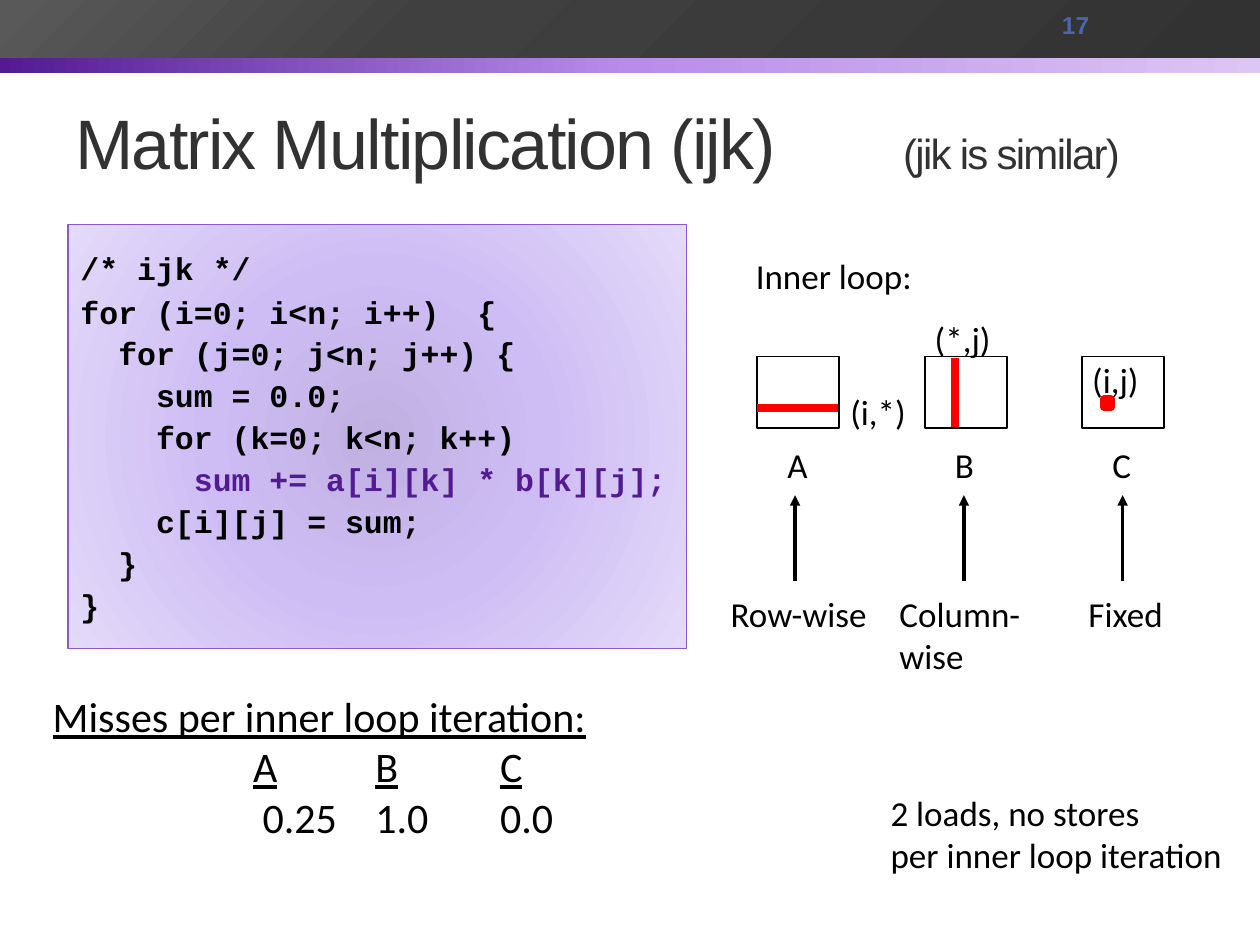
import pptx
import pptx.util
import pptx.dml.color
import pptx.enum.shapes
import pptx.enum.text
import pptx.oxml.ns
import lxml.etree

Inches, Pt = pptx.util.Inches, pptx.util.Pt
COLORS = {"black": "000000", "white": "FFFFFF", "red": "FF0000", "title": "323232",
          "purple": "521B92", "outline": "8B58D2", "number": "4A66AC"}
BANNERS = [
    ((0, 0.24, 10, 0.34), [(0, "521B92"), (50, "B88DEA"), (100, "DCC6F4")], 0),
    ((0, 0, 10, 0.46), [(0, "323232"), (66, "404040"), (99, "595959")], 225),
]
CODE_GRADIENT = [(0, "C0B0E2"), (45, "CEBDF4"), (100, "E4DAF9")]
CODE = [
    "/* ijk */",
    "for (i=0; i<n; i++)  {",
    "  for (j=0; j<n; j++) {",
    "    sum = 0.0;",
    "    for (k=0; k<n; k++)",
    "      sum += a[i][k] * b[k][j];",
    "    c[i][j] = sum;",
    "  }",
    "}",
]
HIGHLIGHT = "sum += a[i][k] * b[k][j];"
MATRICES = [
    {"name": "A", "left": 6.01, "arrow": 6.31, "access": ["Row-wise"], "access_at": (5.7, 1.29)},
    {"name": "B", "left": 7.34, "arrow": 7.65, "access": ["Column-", "wise"], "access_at": (7.04, 1.17)},
    {"name": "C", "left": 8.59, "arrow": 8.91, "access": ["Fixed"], "access_at": (8.54, 0.79)},
]
LABELS = [
    (["(i,*)"], (6.65, 3.05, 0.64, 0.43)),
    (["(*,j)"], (7.32, 2.47, 0.65, 0.43)),
    (["(i,j)"], (8.57, 2.8, 0.57, 0.43)),
    (["Inner loop:"], (5.9, 1.97, 1.45, 0.43)),
    (["2 loads, no stores", "per inner loop iteration"], (6.97, 6.23, 2.86, 0.77)),
]
MISSES = [
    (["Misses per inner loop iteration:"], True),
    (["", "A", "B", "C"], True),
    (["", " 0.25", "1.0", "0.0"], False),
]
MISS_TABS = [1.59, 2.56, 3.55]

deck = pptx.Presentation()
deck.slide_width, deck.slide_height = Inches(10), Inches(7.5)
page = deck.slides.add_slide(deck.slide_layouts[6])


def rgb(color):
    return pptx.dml.color.RGBColor.from_string(color)


def child(parent, tag, **attributes):
    element = lxml.etree.SubElement(parent, pptx.oxml.ns.qn(tag))
    for name, value in attributes.items():
        element.set(name, str(value))
    return element


def add_span(para, text, size, font="Calibri", color=COLORS["black"], bold=False):
    span = para.add_run()
    span.text = text
    span.font.size, span.font.name, span.font.bold = Pt(size), font, bold
    span.font.color.rgb = rgb(color)
    return span


def add_paras(frame, count):
    return [frame.paragraphs[0]] + [frame.add_paragraph() for _ in range(count - 1)]


def add_tabs(para, stops):
    tab_list = child(para._p.get_or_add_pPr(), "a:tabLst")
    for stop in stops:
        child(tab_list, "a:tab", pos=int(Inches(stop)), algn="l")


def add_box(at, wrap=True, anchor="TOP"):
    box = page.shapes.add_textbox(*map(Inches, at))
    box.text_frame.word_wrap = wrap
    box.text_frame.vertical_anchor = getattr(pptx.enum.text.MSO_ANCHOR, anchor)
    return box.text_frame


def add_label(lines, at):
    frame = add_box(at, wrap=False)
    frame.auto_size = pptx.enum.text.MSO_AUTO_SIZE.SHAPE_TO_FIT_TEXT
    for para, line in zip(add_paras(frame, len(lines)), lines):
        add_span(para, line, 20)


def add_rect(at, fill=None, line=None, width=1):
    rect = page.shapes.add_shape(pptx.enum.shapes.MSO_SHAPE.RECTANGLE, *map(Inches, at))
    rect.shadow.inherit = False
    if fill:
        rect.fill.solid()
        rect.fill.fore_color.rgb = rgb(fill)
    if line:
        rect.line.color.rgb, rect.line.width = rgb(line), Pt(width)
    else:
        rect.line.fill.background()
    return rect


def set_gradient(rect, stops, angle=None):
    gradient = lxml.etree.Element(pptx.oxml.ns.qn("a:gradFill"))
    stop_list = child(gradient, "a:gsLst")
    for position, color in stops:
        child(child(stop_list, "a:gs", pos=position * 1000), "a:srgbClr", val=color)
    if angle is None:
        center = dict.fromkeys("ltrb", 50000)
        child(child(gradient, "a:path", path="circle"), "a:fillToRect", **center)
    else:
        child(gradient, "a:lin", ang=angle * 60000, scaled=0)
    rect._element.spPr.find(pptx.oxml.ns.qn("a:prstGeom")).addnext(gradient)


def add_line(start, end, color, width, arrow=False):
    line = page.shapes.add_connector(pptx.enum.shapes.MSO_CONNECTOR.STRAIGHT,
                                     *map(Inches, start + end))
    line.line.color.rgb, line.line.width = rgb(color), Pt(width)
    if arrow:
        child(line.line._get_or_add_ln(), "a:tailEnd", type="triangle")
    child(line._element.spPr, "a:effectLst")


for at, stops, angle in BANNERS:
    set_gradient(add_rect(at), stops, angle)

title = add_box((0.5, 0.58, 9, 1.08), anchor="MIDDLE").paragraphs[0]
add_tabs(title, [6.57])
for text, size in [("Matrix Multiplication (ijk)\t", 40), ("(jik is similar)", 24)]:
    span = add_span(title, text, size, "Arial", COLORS["title"])
    span.font._element.set("spc", "-100")

number = add_box((8.33, 0.02, 1.17, 0.36), anchor="MIDDLE").paragraphs[0]
add_span(number, "17", 14, "Arial", COLORS["number"], True)

for matrix in MATRICES:
    left, arrow = matrix["left"], matrix["arrow"]
    add_rect((left, 2.83, 0.65, 0.57), COLORS["white"], COLORS["black"])
    add_label([matrix["name"]], (left + 0.14, 3.47, 0.36, 0.43))
    add_line((arrow, 4.61), (arrow, 3.93), COLORS["black"], 2, arrow=True)
    access_left, access_width = matrix["access_at"]
    access_height = 0.09 + 0.34 * len(matrix["access"])
    add_label(matrix["access"], (access_left, 4.65, access_width, access_height))

add_line((6.01, 3.24), (6.65, 3.24), COLORS["red"], 4.5)
add_line((7.58, 2.84), (7.58, 3.39), COLORS["red"], 4.5)
add_rect((8.76, 3.17, 0.06, 0.06), COLORS["red"], COLORS["red"], 4.5)
for lines, at in LABELS:
    add_label(lines, at)

misses = add_box((0.32, 5.43, 5.55, 1.33))
for para, (cells, underlined) in zip(add_paras(misses, len(MISSES)), MISSES):
    add_tabs(para, MISS_TABS)
    for column, cell in enumerate(cells):
        if column:
            add_span(para, "\t", 24)
        if cell:
            add_span(para, cell, 24).font.underline = underlined

code_box = add_rect((0.54, 1.78, 4.91, 3.37), line=COLORS["outline"], width=0.75)
set_gradient(code_box, CODE_GRADIENT)
code_frame = code_box.text_frame
code_frame.word_wrap = True
code_frame.vertical_anchor = pptx.enum.text.MSO_ANCHOR.TOP
for row, (para, line) in enumerate(zip(add_paras(code_frame, len(CODE)), CODE)):
    para.alignment = pptx.enum.text.PP_ALIGN.LEFT
    para.line_spacing = 0.65 if row else 1.5
    para.space_before = Pt(9.9)
    indent, mark, rest = line.partition(HIGHLIGHT)
    for text, color in [(indent, COLORS["black"]), (mark + rest, COLORS["purple"])]:
        if text:
            add_span(para, text, 18, "Courier New", color, True)

deck.save("out.pptx")
